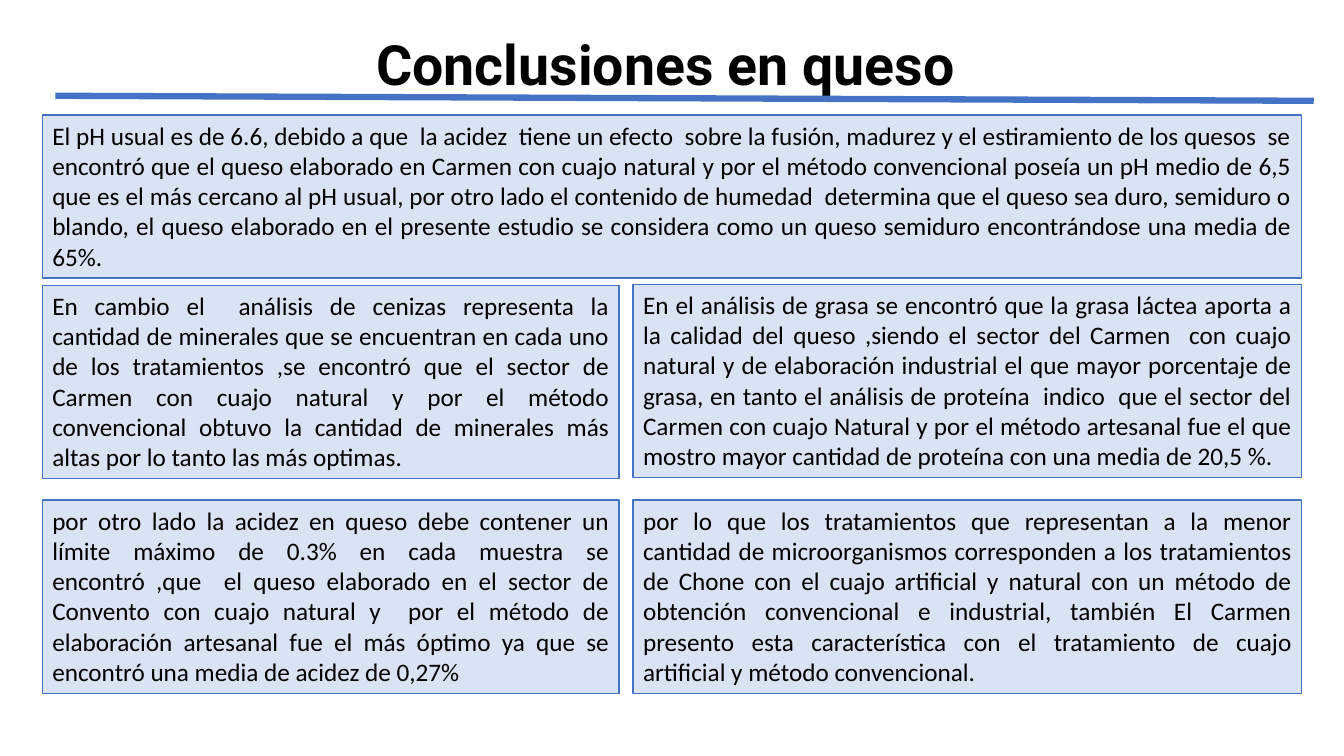
from dataclasses import dataclass

from lxml import etree
from pptx import Presentation
from pptx import util as u
from pptx.dml.color import RGBColor
from pptx.enum import shapes, text
from pptx.oxml import ns


@dataclass(frozen=True)
class Theme:
    ink: str = "000000"
    fill: str = "DAE3F3"
    line: str = "4472C4"
    head: float = 39.6
    body: int = 18
    thin: int = 1
    thick: float = 4.5
    head_font: str = "Roboto"
    body_font: str = "Calibri"


PX = 9144
WIDE, HIGH = 1333, 750
LEFT, RIGHT = 42, 628
LEFT_W, RIGHT_W, FULL_W = 572, 663, 1249
LOW, TALL = 496, 192

PH = (
    "El pH usual es de 6.6, debido a que  la acidez  tiene un efecto  sobre la fusión, "
    "madurez y el estiramiento de los quesos  se encontró que el queso elaborado en Carmen "
    "con cuajo natural y por el método convencional poseía un pH medio de 6,5 que es el más "
    "cercano al pH usual, por otro lado el contenido de humedad  determina que el queso sea "
    "duro, semiduro o blando, el queso elaborado en el presente estudio se considera como un "
    "queso semiduro encontrándose una media de 65%."
)
ASH = (
    "En cambio el  análisis de cenizas representa la cantidad de minerales que se encuentran "
    "en cada uno de los tratamientos ,se encontró que el sector de Carmen con cuajo natural y "
    "por el método convencional obtuvo la cantidad de minerales más altas por lo tanto las más "
    "optimas."
)
FAT = (
    "En el análisis de grasa se encontró que la grasa láctea aporta a la calidad del queso "
    ",siendo el sector del Carmen  con cuajo natural y de elaboración industrial el que mayor "
    "porcentaje de grasa, en tanto el análisis de proteína  indico  que el sector del Carmen "
    "con cuajo Natural y por el método artesanal fue el que mostro mayor cantidad de proteína "
    "con una media de 20,5 %."
)
ACID = (
    "por otro lado la acidez en queso debe contener un límite máximo de 0.3% en cada muestra "
    "se encontró ,que  el queso elaborado en el sector de Convento con cuajo natural y  por el "
    "método de elaboración artesanal fue el más óptimo ya que se encontró una media de acidez "
    "de 0,27% "
)
GERMS = (
    "por lo que los tratamientos que representan a la menor cantidad de microorganismos "
    "corresponden a los tratamientos de Chone con el cuajo artificial y natural con un método "
    "de obtención convencional e industrial, también El Carmen presento esta característica "
    "con el tratamiento de cuajo artificial y método convencional."
)


def rgb(code):
    return RGBColor.from_string(code)


def write(frame, words, *, font, size, color, align, anchor, bold=False, space=1.0):
    frame.word_wrap = True
    frame.vertical_anchor = anchor
    para = frame.paragraphs[0]
    para.alignment = align
    para.line_spacing = space
    run = para.add_run()
    run.text = words
    run.font.name = font
    run.font.size = u.Pt(size)
    run.font.bold = bold
    run.font.color.rgb = rgb(color)


class Page:
    """Draws elements on one slide in one style, with lengths in px."""

    def __init__(self, slide, theme):
        self.items = slide.shapes
        self.theme = theme

    def title(self, words, *area):
        box = self.items.add_textbox(*(n * PX for n in area))
        write(box.text_frame, words, font=self.theme.head_font, size=self.theme.head,
              color=self.theme.ink, align=text.PP_ALIGN.CENTER,
              anchor=text.MSO_ANCHOR.MIDDLE, bold=True, space=0.9)

    def panel(self, words, *area):
        box = self.items.add_shape(shapes.MSO_SHAPE.RECTANGLE, *(n * PX for n in area))
        box.shadow.inherit = False
        box.fill.solid()
        box.fill.fore_color.rgb = rgb(self.theme.fill)
        box.line.color.rgb = rgb(self.theme.line)
        box.line.width = u.Pt(self.theme.thin)
        write(box.text_frame, words, font=self.theme.body_font, size=self.theme.body,
              color=self.theme.ink, align=text.PP_ALIGN.JUSTIFY,
              anchor=text.MSO_ANCHOR.TOP)
        box.text_frame.auto_size = text.MSO_AUTO_SIZE.SHAPE_TO_FIT_TEXT

    def rule(self, *ends):
        line = self.items.add_connector(shapes.MSO_CONNECTOR.STRAIGHT, *(n * PX for n in ends))
        line.line.color.rgb = rgb(self.theme.line)
        line.line.width = u.Pt(self.theme.thick)
        etree.SubElement(line._element.spPr, ns.qn("a:effectLst"))


def main():
    deck = Presentation()
    deck.slide_width, deck.slide_height = WIDE * PX, HIGH * PX
    page = Page(deck.slides.add_slide(deck.slide_layouts[6]), Theme())
    page.title("Conclusiones en queso ", 92, 40, 1150, 54)
    page.panel(PH, LEFT, 114, FULL_W, 162)
    page.panel(ASH, LEFT, 283, LEFT_W, TALL)
    page.panel(GERMS, RIGHT, LOW, RIGHT_W, TALL)
    page.panel(FAT, RIGHT, 282, RIGHT_W, TALL)
    page.rule(55, 95, 1303, 100)
    page.panel(ACID, LEFT, LOW, LEFT_W, TALL)
    deck.save("out.pptx")


if __name__ == "__main__":
    main()
